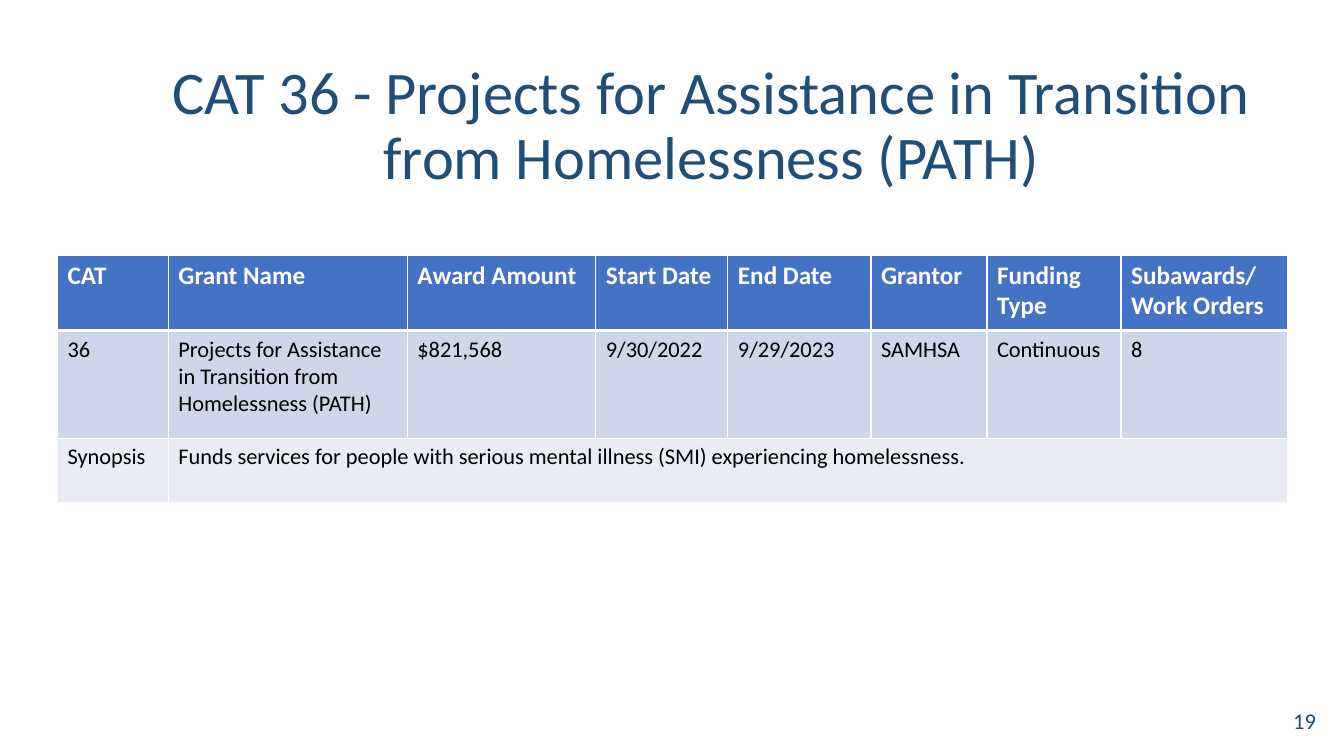
"""Build the CAT 36 grant summary slide."""
from dataclasses import dataclass
from typing import Any

from lxml import etree
from pptx import Presentation
from pptx import table as tb
from pptx import util as u
from pptx.dml.color import RGBColor
from pptx.enum import text as t
from pptx.oxml import ns

NAVY = RGBColor(0x1F, 0x4E, 0x79)
BLUE = RGBColor(0x44, 0x72, 0xC4)
WHITE = RGBColor(0xFF, 0xFF, 0xFF)
BLACK = RGBColor(0, 0, 0)
BAND = RGBColor(0xCF, 0xD5, 0xEA)
PALE = RGBColor(0xE9, 0xEB, 0xF5)


@dataclass
class Label:
    words: str
    left: float
    top: float
    width: float
    height: float
    size: float
    align: Any
    space: float


@dataclass
class Row:
    cells: list[str]
    height: float
    fill: RGBColor
    ink: RGBColor
    size: float
    bold: bool
    above: float
    below: float


TITLE = Label("CAT 36 - Projects for Assistance in Transition from Homelessness (PATH)",
              1.34, 0.76, 11.43, 1.01, 43.2, t.PP_ALIGN.CENTER, 0.9)
NUMBER = Label("19", 10.15, 6.95, 3, 0.4, 16, t.PP_ALIGN.RIGHT, 1.0)
WIDTHS = [1.1, 2.37, 1.87, 1.31, 1.42, 1.15, 1.33, 1.65]
ROWS = [
    Row(["CAT", "Grant Name", "Award Amount", "Start Date", "End Date", "Grantor",
         "Funding\nType", "Subawards/Work Orders"],
        0.75, BLUE, WHITE, 18, True, 1, 3),
    Row(["36", "Projects for Assistance in Transition from Homelessness (PATH)", "$821,568",
         "9/30/2022", "9/29/2023", "SAMHSA", "Continuous", "8"],
        1.07, BAND, BLACK, 16, False, 3, 1),
    Row(["Synopsis", "Funds services for people with serious mental illness (SMI) "
         "experiencing homelessness."],
        0.64, PALE, BLACK, 16, False, 1, 1),
]


def style(frame: Any, size: float, ink: RGBColor, bold: bool) -> None:
    """Apply one font to all paragraphs of a frame."""
    form = {"name": "Calibri", "size": u.Pt(size), "bold": bold}
    for para in frame.paragraphs:
        for key, value in form.items():
            setattr(para.font, key, value)
        para.font.color.rgb = ink


def write(shape: Any, label: Label) -> None:
    """Place a text shape and fill in its label."""
    for key in ("left", "top", "width", "height"):
        setattr(shape, key, u.Inches(getattr(label, key)))
    frame = shape.text_frame
    frame.text = label.words
    form = {"word_wrap": True, "auto_size": t.MSO_AUTO_SIZE.NONE,
            "vertical_anchor": t.MSO_ANCHOR.MIDDLE}
    for key, value in form.items():
        setattr(frame, key, value)
    para = frame.paragraphs[0]
    para.alignment = label.align
    para.line_spacing = label.space
    style(frame, label.size, NAVY, False)


def edge(cell: Any, row: Row) -> None:
    """Draw the white borders of a cell."""
    props = cell._tc.get_or_add_tcPr()
    sides = {"lnL": 1, "lnR": 1, "lnT": row.above, "lnB": row.below}
    for side, width in sides.items():
        line = etree.SubElement(props, ns.qn(f"a:{side}"), w=str(u.Pt(width)))
        fill = etree.SubElement(line, ns.qn("a:solidFill"))
        etree.SubElement(fill, ns.qn("a:srgbClr"), val=str(WHITE))


def fill_row(grid: tb.Table, index: int, row: Row) -> None:
    """Write and format one table row."""
    grid.rows[index].height = u.Inches(row.height)
    for col in range(len(WIDTHS)):
        cell = grid.cell(index, col)
        edge(cell, row)
        cell.fill.solid()
        cell.fill.fore_color.rgb = row.fill
        if col < len(row.cells):
            cell.text = row.cells[col]
        style(cell.text_frame, row.size, row.ink, row.bold)


def main() -> None:
    """Create and save the slide."""
    deck = Presentation()
    deck.slide_width = u.Inches(13.33)
    deck.slide_height = u.Inches(7.5)
    slide = deck.slides.add_slide(deck.slide_layouts[5])
    write(slide.shapes.title, TITLE)
    write(slide.shapes.add_textbox(0, 0, 0, 0), NUMBER)
    high = sum(row.height for row in ROWS)
    grid = slide.shapes.add_table(len(ROWS), len(WIDTHS), u.Inches(0.57), u.Inches(2.53),
                                  u.Inches(sum(WIDTHS)), u.Inches(high)).table
    for col, width in zip(grid.columns, WIDTHS):
        col.width = u.Inches(width)
    for index, row in enumerate(ROWS):
        fill_row(grid, index, row)
    grid.cell(2, 1).merge(grid.cell(2, len(WIDTHS) - 1))
    deck.save("out.pptx")


if __name__ == "__main__":
    main()
